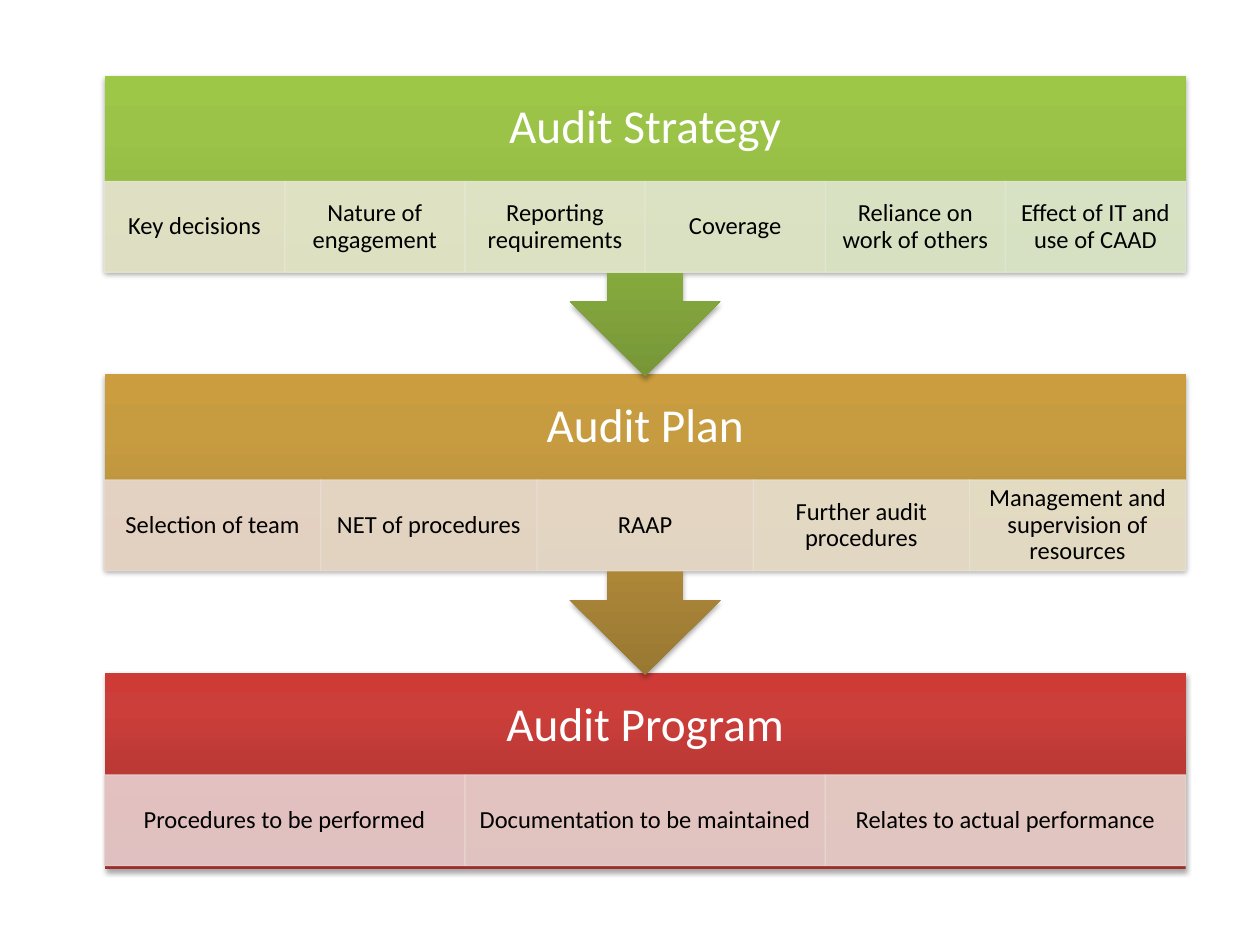
from pptx import Presentation
from pptx.dml.color import RGBColor
from pptx.enum.shapes import MSO_SHAPE
from pptx.enum.text import MSO_ANCHOR, PP_ALIGN
from pptx.oxml import parse_xml
from pptx.oxml.ns import nsdecls, qn
from pptx.util import Inches, Pt
from lxml import etree

RECTANGLE = MSO_SHAPE.RECTANGLE
CALLOUT = MSO_SHAPE.UP_ARROW_CALLOUT
MIDDLE = MSO_ANCHOR.MIDDLE
CENTER = PP_ALIGN.CENTER

WHITE = RGBColor(0xFF, 0xFF, 0xFF)
BLACK = RGBColor(0x00, 0x00, 0x00)
GREEN = [RGBColor(0x77, 0x97, 0x37), RGBColor(0x9B, 0xC3, 0x48), RGBColor(0x9D, 0xC7, 0x46)]
GOLD = [RGBColor(0x99, 0x78, 0x32), RGBColor(0xC7, 0x9C, 0x41), RGBColor(0xCB, 0x9D, 0x3F)]
RED = [RGBColor(0x9C, 0x2F, 0x2D), RGBColor(0xCB, 0x3E, 0x3A), RGBColor(0xCE, 0x3B, 0x37)]
GRADIENT_STOPS = (0, 80, 100)

LEFT, WIDTH = 0.83, 8.58
TOP, PITCH = 0.6, 2.37
TITLE_HEIGHT, CELL_HEIGHT = 0.84, 0.72

STAGES = [
    ("Audit Strategy", GREEN, CALLOUT, 2.39, 0.84, [
        ("Key decisions", RGBColor(0xE8, 0xE5, 0xD1)),
        ("Nature of engagement", RGBColor(0xE7, 0xE7, 0xD1)),
        ("Reporting requirements", RGBColor(0xE5, 0xE7, 0xD1)),
        ("Coverage", RGBColor(0xE3, 0xE7, 0xD1)),
        ("Reliance on work of others", RGBColor(0xE0, 0xE7, 0xD1)),
        ("Effect of IT and use of CAAD", RGBColor(0xDE, 0xE7, 0xD1)),
    ]),
    ("Audit Plan", GOLD, CALLOUT, 2.39, 0.84, [
        ("Selection of team", RGBColor(0xE8, 0xD8, 0xD0)),
        ("NET of procedures", RGBColor(0xE8, 0xDB, 0xD0)),
        ("RAAP", RGBColor(0xE8, 0xDD, 0xD1)),
        ("Further audit procedures", RGBColor(0xE8, 0xE0, 0xD1)),
        ("Management and supervision of resources", RGBColor(0xE8, 0xE2, 0xD1)),
    ]),
    ("Audit Program", RED, RECTANGLE, 1.56, 0.81, [
        ("Procedures to be performed", RGBColor(0xE8, 0xD0, 0xD0)),
        ("Documentation to be maintained", RGBColor(0xE8, 0xD3, 0xD0)),
        ("Relates to actual performance", RGBColor(0xE8, 0xD6, 0xD0)),
    ]),
]


def write_text(shape, text, size, color, side_inset, end_inset):
    frame = shape.text_frame
    frame.word_wrap = True
    frame.vertical_anchor = MIDDLE
    frame.margin_left = frame.margin_right = Inches(side_inset)
    frame.margin_top = frame.margin_bottom = Inches(end_inset)
    paragraph = frame.paragraphs[0]
    paragraph.text = text
    paragraph.alignment = CENTER
    paragraph.line_spacing = 0.9
    paragraph.font.name = "Calibri"
    paragraph.font.size = Pt(size)
    paragraph.font.color.rgb = color


def add_gradient_and_shadow(shape, colors):
    shape.line.fill.background()
    stops = "".join(
        f'<a:gs pos="{position * 1000}"><a:srgbClr val="{color}"/></a:gs>'
        for position, color in zip(GRADIENT_STOPS, colors))
    outline = shape._element.spPr.find(qn("a:ln"))
    outline.addprevious(parse_xml(
        f'<a:gradFill {nsdecls("a")} rotWithShape="0"><a:gsLst>{stops}</a:gsLst>'
        '<a:lin ang="16200000" scaled="0"/></a:gradFill>'))
    outline.addnext(parse_xml(
        f'<a:effectLst {nsdecls("a")}><a:outerShdw blurRad="40000" dist="23000" '
        'dir="5400000" rotWithShape="0"><a:srgbClr val="000000">'
        '<a:alpha val="35000"/></a:srgbClr></a:outerShdw></a:effectLst>'))


def add_panel(slide, kind, top, height, colors):
    panel = slide.shapes.add_shape(
        kind, Inches(LEFT), Inches(top), Inches(WIDTH), Inches(height))
    if kind == CALLOUT:
        panel.rotation = 180
    add_gradient_and_shadow(panel, colors)


def add_heading(slide, text, top):
    heading = slide.shapes.add_textbox(
        Inches(LEFT), Inches(top), Inches(WIDTH), Inches(TITLE_HEIGHT))
    write_text(heading, text, 27, WHITE, 0.21, 0.21)


def add_cell(slide, text, color, left, top, width):
    cell = slide.shapes.add_shape(
        RECTANGLE, Inches(left), Inches(top), Inches(width), Inches(CELL_HEIGHT))
    cell.shadow.inherit = False
    cell.fill.solid()
    cell.fill.fore_color.rgb = color
    cell.line.color.rgb = color
    cell.line.width = Pt(0.75)
    for tint in cell._element.spPr.iter(qn("a:srgbClr")):
        etree.SubElement(tint, qn("a:alpha")).set("val", "90000")
    write_text(cell, text, 14, BLACK, 0.11, 0.02)


def add_stage(slide, top, title, colors, kind, height, cell_offset, topics):
    add_panel(slide, kind, top, height, colors)
    add_heading(slide, title, top)
    cell_width = WIDTH / len(topics)
    for column, (topic, tint) in enumerate(topics):
        add_cell(slide, topic, tint, LEFT + column * cell_width,
                 top + cell_offset, cell_width)


def main():
    presentation = Presentation()
    presentation.slide_width = Inches(10)
    presentation.slide_height = Inches(7.5)
    slide = presentation.slides.add_slide(presentation.slide_layouts[6])
    for row, stage in reversed(list(enumerate(STAGES))):
        add_stage(slide, TOP + row * PITCH, *stage)
    presentation.save("out.pptx")


if __name__ == "__main__":
    main()
